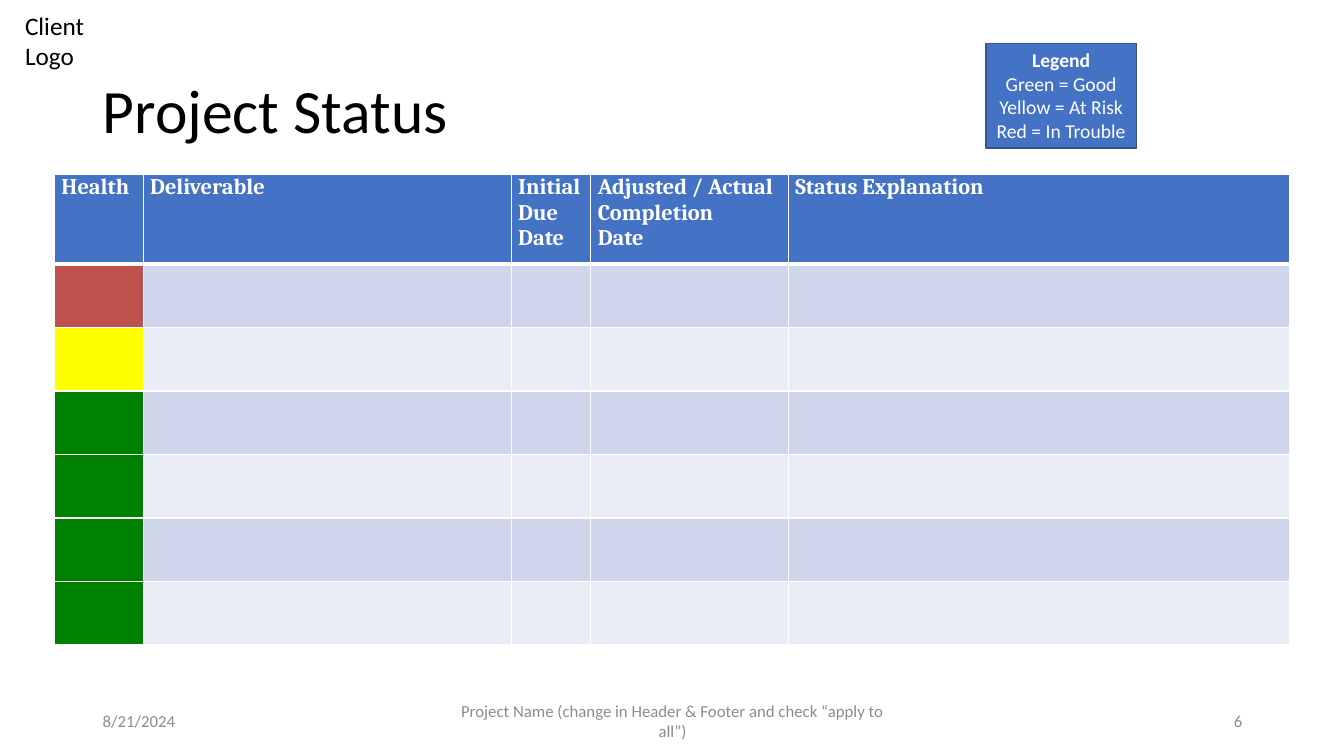
import pptx
import pptx.dml.color
import pptx.enum.shapes
import pptx.enum.text
import pptx.oxml
import pptx.oxml.ns
import pptx.util
from pptx.util import Inches

ALIGN = pptx.enum.text.PP_ALIGN
ANCHOR = pptx.enum.text.MSO_ANCHOR
AUTO_SIZE = pptx.enum.text.MSO_AUTO_SIZE

BLUE, WHITE, BLACK, GREY = "4472C4", "FFFFFF", "000000", "8C8C8C"
RED, YELLOW, GREEN = "C0504D", "FFFF00", "008000"
BANDS = ["CFD5EA", "E9EBF5"]

TITLE = "Project Status"
CLIENT_LOGO = "Client\vLogo"
LEGEND = ["Legend", "Green = Good", "Yellow = At Risk", "Red = In Trouble"]
COLUMNS = [
    (["Health"], 0.88),
    (["Deliverable"], 3.65),
    (["Initial", "Due", "Date"], 0.79),
    (["Adjusted / Actual", "Completion", "Date"], 1.96),
    (["Status Explanation"], 4.97),
]
HEALTH = [RED, YELLOW, GREEN, GREEN, GREEN, GREEN]
HEADER_HEIGHT, ROW_HEIGHT = 0.89, 0.63
FOOTER = [
    ("8/21/2024", 0.92, 3, ALIGN.LEFT),
    ("Project Name (change in Header & Footer and check “apply to all”)", 4.42, 4.5, ALIGN.CENTER),
    ("6", 9.42, 3, ALIGN.RIGHT),
]


def rgb(color):
    return pptx.dml.color.RGBColor.from_string(color)


def write(frame, lines, size=18, color=BLACK, font="Calibri", bold_lines=0,
          align=ALIGN.LEFT, spacing=None):
    """Put one paragraph per line into the frame; the first bold_lines are bold."""
    for index, line in enumerate(lines):
        paragraph = frame.paragraphs[0] if index == 0 else frame.add_paragraph()
        paragraph.text = line
        paragraph.alignment = align
        if spacing:
            paragraph.line_spacing = spacing
        for run in paragraph.runs:
            run.font.size = pptx.util.Pt(size)
            run.font.name = font
            run.font.bold = index < bold_lines
            run.font.color.rgb = rgb(color)


def add_text(slide, box, lines, anchor=ANCHOR.TOP, **text_format):
    frame = slide.shapes.add_textbox(*map(Inches, box)).text_frame
    frame.word_wrap = True
    frame.vertical_anchor = anchor
    write(frame, lines, **text_format)


def style_cell(cell, fill, bottom_width=1):
    """Fill the cell and give it white borders, with a chosen bottom width."""
    properties = cell._tc.get_or_add_tcPr()
    for side, width in (("L", 1), ("R", 1), ("T", 1), ("B", bottom_width)):
        properties.append(pptx.oxml.parse_xml(
            f'<a:ln{side} {pptx.oxml.ns.nsdecls("a")} w="{pptx.util.Pt(width)}">'
            f'<a:solidFill><a:srgbClr val="{WHITE}"/></a:solidFill></a:ln{side}>'))
    cell.fill.solid()
    cell.fill.fore_color.rgb = rgb(fill)


def add_status_table(slide):
    widths = [width for _, width in COLUMNS]
    height = HEADER_HEIGHT + ROW_HEIGHT * len(HEALTH)
    table = slide.shapes.add_table(
        len(HEALTH) + 1, len(COLUMNS), Inches(0.54), Inches(1.73),
        Inches(sum(widths)), Inches(height)).table
    for column, width in zip(table.columns, widths):
        column.width = Inches(width)
    for index, row in enumerate(table.rows):
        row.height = Inches(ROW_HEIGHT if index else HEADER_HEIGHT)

    for column, (heading, _) in enumerate(COLUMNS):
        cell = table.cell(0, column)
        cell.margin_left = cell.margin_right = Inches(0.07)
        cell.margin_top = cell.margin_bottom = 0
        write(cell.text_frame, heading, size=16, color=WHITE, font="Cambria",
              bold_lines=len(heading))
        style_cell(cell, BLUE, bottom_width=3)
    for row, health in enumerate(HEALTH):
        for column in range(len(COLUMNS)):
            band = BANDS[row % 2]
            style_cell(table.cell(row + 1, column), band if column else health)


def add_legend(slide):
    legend = slide.shapes.add_shape(
        pptx.enum.shapes.MSO_SHAPE.RECTANGLE, *map(Inches, (9.78, 0.43, 1.49, 1.04)))
    legend.shadow.inherit = False
    legend.fill.solid()
    legend.fill.fore_color.rgb = rgb(BLUE)
    legend.line.color.rgb = rgb("325491")
    legend.line.width = pptx.util.Pt(1)
    frame = legend.text_frame
    frame.word_wrap = False
    frame.auto_size = AUTO_SIZE.SHAPE_TO_FIT_TEXT
    frame.vertical_anchor = ANCHOR.TOP
    write(frame, LEGEND, size=14, color=WHITE, bold_lines=1, align=ALIGN.CENTER)


def main():
    deck = pptx.Presentation()
    deck.slide_width, deck.slide_height = Inches(13.33), Inches(7.5)
    slide = deck.slides.add_slide(deck.slide_layouts.get_by_name("Title Only"))

    add_text(slide, (0.15, 0.05, 1.11, 0.71), [CLIENT_LOGO])
    add_status_table(slide)

    title = slide.shapes.title
    title.left, title.top, title.width, title.height = map(Inches, (0.92, 0.4, 11.5, 1.45))
    title.text_frame.auto_size = AUTO_SIZE.NONE
    title.text_frame.vertical_anchor = ANCHOR.MIDDLE
    write(title.text_frame, [TITLE], size=44, spacing=0.9)

    for text, left, width, align in FOOTER:
        add_text(slide, (left, 6.95, width, 0.4), [text], anchor=ANCHOR.MIDDLE,
                 size=12, color=GREY, align=align)
    add_legend(slide)
    deck.save("out.pptx")


if __name__ == "__main__":
    main()
